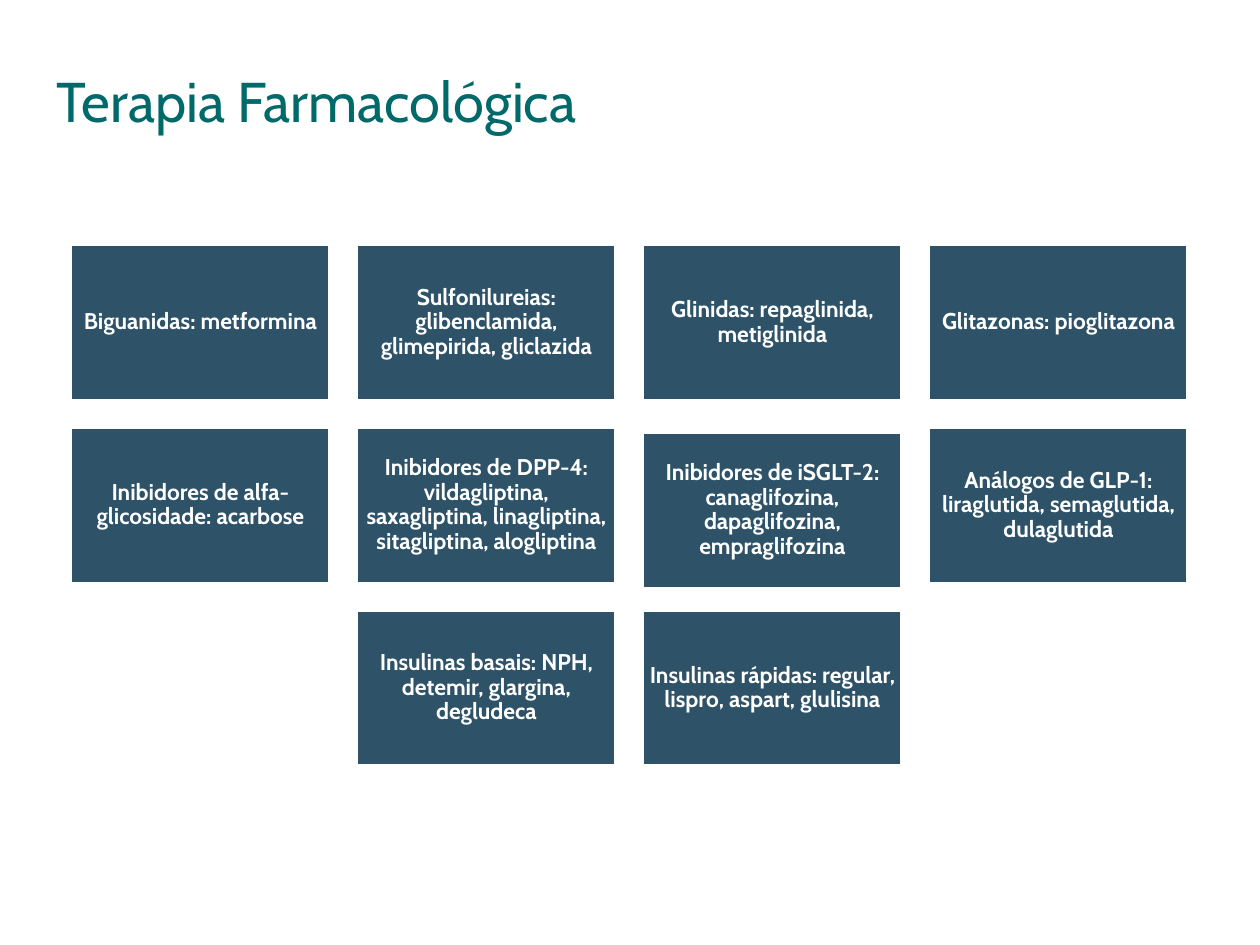
from dataclasses import dataclass

import pptx
import pptx.dml.color
import pptx.enum.shapes
import pptx.enum.text
import pptx.slide
import pptx.util
from pptx.util import Inches


@dataclass(frozen=True)
class Theme:
    font: str = "Cabin"
    title_color: str = "006969"
    card_fill: str = "2E5369"
    white: str = "FFFFFF"
    title_size: int = 32
    card_size: int = 13
    border_width: int = 2


@dataclass(frozen=True)
class DrugClass:
    text: str
    col: int
    row: int
    shift: float = 0


THEME = Theme()
LEFT, TOP = 0.56, 1.94
CARD_W, CARD_H = 2.06, 1.24
COL_STEP, ROW_STEP = 2.27, 1.45
INSET = 0.05

DRUG_CLASSES = [
    DrugClass("Biguanidas: metformina", 0, 0),
    DrugClass("Sulfonilureias: glibenclamida, glimepirida, gliclazida", 1, 0),
    DrugClass("Glinidas: repaglinida, metiglinida", 2, 0),
    DrugClass("Glitazonas: pioglitazona", 3, 0),
    DrugClass("Inibidores de alfa-glicosidade: acarbose", 0, 1),
    DrugClass("Inibidores de DPP-4: vildagliptina, saxagliptina, linagliptina, "
              "sitagliptina, alogliptina", 1, 1),
    DrugClass("Inibidores de iSGLT-2: canaglifozina, dapaglifozina, "
              "empraglifozina", 2, 1, shift=0.04),
    DrugClass("Análogos de GLP-1: liraglutida, semaglutida, dulaglutida", 3, 1),
    DrugClass("Insulinas basais: NPH, detemir, glargina, degludeca", 1, 2),
    DrugClass("Insulinas rápidas: regular, lispro, aspart, glulisina", 2, 2),
]


def rgb(value: str) -> pptx.dml.color.RGBColor:
    return pptx.dml.color.RGBColor.from_string(value)


def write(sp, text: str, size: int, color: str, bold: bool = False):
    tf = sp.text_frame
    tf.text = text
    tf.word_wrap = True
    tf.vertical_anchor = pptx.enum.text.MSO_ANCHOR.MIDDLE
    r = tf.paragraphs[0].runs[0]
    r.font.name = THEME.font
    r.font.size = pptx.util.Pt(size)
    r.font.bold = bold
    r.font.color.rgb = rgb(color)
    return tf


def add_title(s: pptx.slide.Slide, text: str) -> None:
    sp = s.shapes.add_textbox(Inches(0.35), Inches(0.44), Inches(8.27), Inches(0.71))
    write(sp, text, THEME.title_size, THEME.title_color)


def add_card(s: pptx.slide.Slide, drug: DrugClass) -> None:
    sp = s.shapes.add_shape(
        pptx.enum.shapes.MSO_SHAPE.RECTANGLE,
        Inches(LEFT + drug.col * COL_STEP),
        Inches(TOP + drug.row * ROW_STEP + drug.shift),
        Inches(CARD_W), Inches(CARD_H))
    sp.shadow.inherit = False
    sp.fill.solid()
    sp.fill.fore_color.rgb = rgb(THEME.card_fill)
    sp.line.color.rgb = rgb(THEME.white)
    sp.line.width = pptx.util.Pt(THEME.border_width)
    tf = write(sp, drug.text, THEME.card_size, THEME.white, bold=True)
    tf.margin_left = tf.margin_right = Inches(INSET)
    tf.margin_top = tf.margin_bottom = Inches(INSET)
    p = tf.paragraphs[0]
    p.alignment = pptx.enum.text.PP_ALIGN.CENTER
    p.line_spacing = 0.9


def main() -> None:
    prs = pptx.Presentation()
    prs.slide_width, prs.slide_height = Inches(10), Inches(7.5)
    s = prs.slides.add_slide(prs.slide_layouts[6])
    add_title(s, "Terapia Farmacológica")
    for drug in DRUG_CLASSES:
        add_card(s, drug)
    prs.save("out.pptx")


if __name__ == "__main__":
    main()
